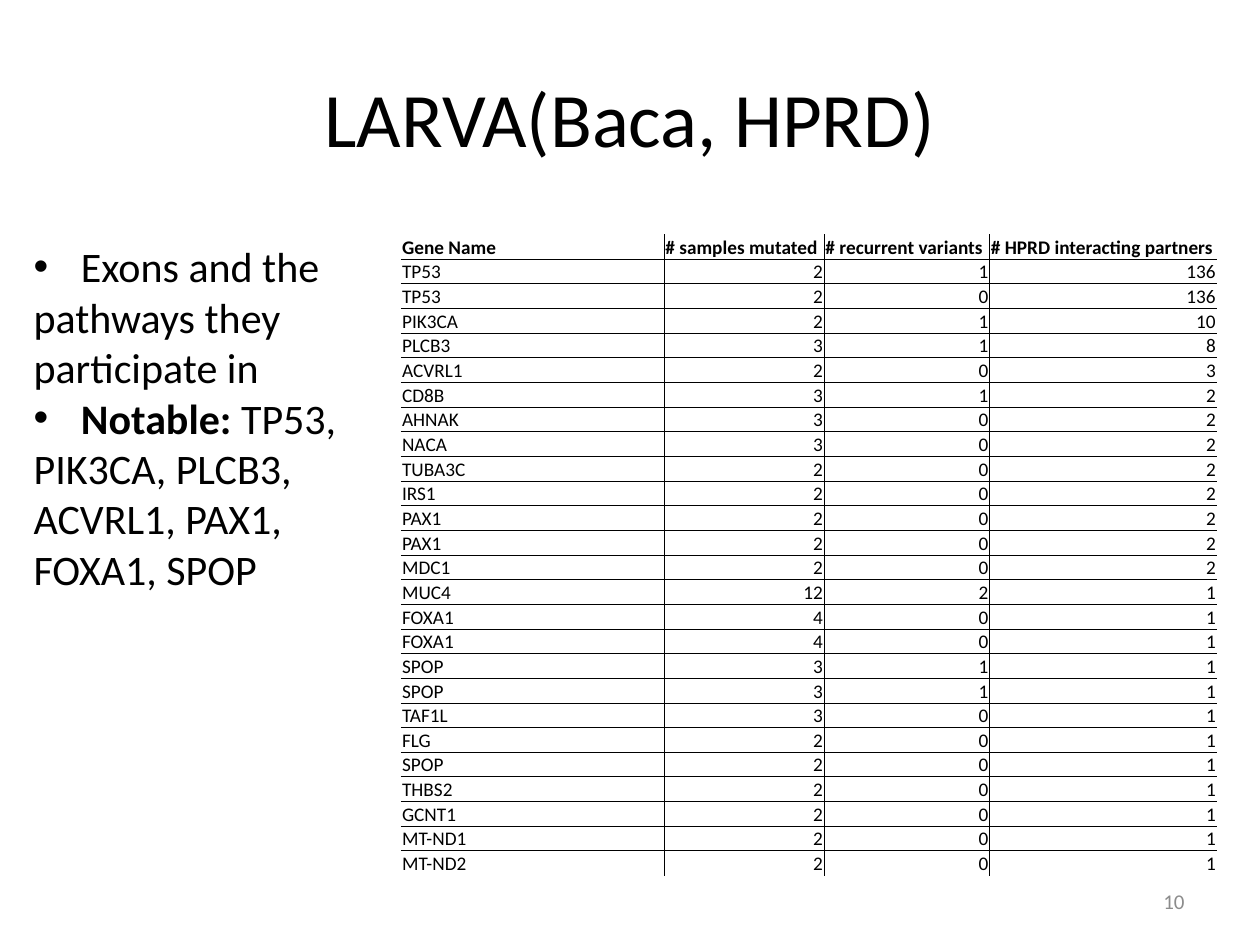
from dataclasses import dataclass
from typing import NamedTuple

from lxml.etree import SubElement
from pptx import Presentation
from pptx.dml.color import RGBColor
from pptx.enum.text import MSO_ANCHOR, MSO_AUTO_SIZE, PP_ALIGN
from pptx.oxml.ns import qn
from pptx.util import Pt


@dataclass(frozen=True)
class Theme:
    font: str = "Calibri"
    bullet_font: str = "Arial"
    ink: str = "000000"
    muted: str = "8C8C8C"
    title_size: float = 44
    body_size: float = 24
    table_size: float = 11
    number_size: float = 12
    border_width: float = 0.5


class Box(NamedTuple):
    left: float
    top: float
    width: float
    height: float


class Gene(NamedTuple):
    name: str
    samples: int
    variants: int
    partners: int


class ListLine(NamedTuple):
    text: str
    lead: str = ""
    bulleted: bool = False


THEME = Theme()
TITLE_BOX = Box(36, 21.6, 648, 90)
TABLE_BOX = Box(229, 134, 466.5, 366.6)
NUMBER_BOX = Box(516, 500.5, 168, 28.8)
LIST_BOX = Box(12, 134, 188, 211)
COLUMN_WIDTHS = (150.5, 91.5, 94.5, 130)
HANGING_INDENT = 27
CELL_INSET = 0.75

HEADINGS = (
    "Gene Name",
    "# samples mutated",
    "# recurrent variants",
    "# HPRD interacting partners",
)
GENES = (
    Gene("TP53", 2, 1, 136),
    Gene("TP53", 2, 0, 136),
    Gene("PIK3CA", 2, 1, 10),
    Gene("PLCB3", 3, 1, 8),
    Gene("ACVRL1", 2, 0, 3),
    Gene("CD8B", 3, 1, 2),
    Gene("AHNAK", 3, 0, 2),
    Gene("NACA", 3, 0, 2),
    Gene("TUBA3C", 2, 0, 2),
    Gene("IRS1", 2, 0, 2),
    Gene("PAX1", 2, 0, 2),
    Gene("PAX1", 2, 0, 2),
    Gene("MDC1", 2, 0, 2),
    Gene("MUC4", 12, 2, 1),
    Gene("FOXA1", 4, 0, 1),
    Gene("FOXA1", 4, 0, 1),
    Gene("SPOP", 3, 1, 1),
    Gene("SPOP", 3, 1, 1),
    Gene("TAF1L", 3, 0, 1),
    Gene("FLG", 2, 0, 1),
    Gene("SPOP", 2, 0, 1),
    Gene("THBS2", 2, 0, 1),
    Gene("GCNT1", 2, 0, 1),
    Gene("MT-ND1", 2, 0, 1),
    Gene("MT-ND2", 2, 0, 1),
)
LIST_LINES = (
    ListLine("Exons and the", bulleted=True),
    ListLine("pathways they"),
    ListLine("participate in"),
    ListLine(" TP53,", lead="Notable:", bulleted=True),
    ListLine("PIK3CA, PLCB3,"),
    ListLine("ACVRL1, PAX1,"),
    ListLine("FOXA1, SPOP"),
)


def in_points(box: Box) -> tuple:
    return tuple(Pt(length) for length in box)


def place(shape, box: Box) -> None:
    shape.left, shape.top, shape.width, shape.height = in_points(box)


def set_font(paragraph, size: float, color: str) -> None:
    paragraph.font.name = THEME.font
    paragraph.font.size = Pt(size)
    paragraph.font.color.rgb = RGBColor.from_string(color)


def add_title(slide, text: str) -> None:
    title = slide.shapes.title
    place(title, TITLE_BOX)
    title.text_frame.text = text
    set_font(title.text_frame.paragraphs[0], THEME.title_size, THEME.ink)


def set_borders(cell, edges: dict[str, bool]) -> None:
    properties = cell._tc.get_or_add_tcPr()
    for edge, visible in edges.items():
        line = SubElement(properties, qn(f"a:{edge}"), w=str(Pt(THEME.border_width)))
        if visible:
            fill = SubElement(line, qn("a:solidFill"))
            SubElement(fill, qn("a:srgbClr"), val=THEME.ink)
        else:
            SubElement(line, qn("a:noFill"))


def fill_cell(cell, text: str, heading: bool, numeric: bool) -> None:
    cell.fill.background()
    cell.vertical_anchor = MSO_ANCHOR.BOTTOM
    cell.margin_left = cell.margin_right = cell.margin_top = Pt(CELL_INSET)
    cell.margin_bottom = Pt(0)
    cell.text = text
    paragraph = cell.text_frame.paragraphs[0]
    paragraph.alignment = PP_ALIGN.RIGHT if numeric else PP_ALIGN.LEFT
    set_font(paragraph, THEME.table_size, THEME.ink)
    paragraph.font.bold = heading


def add_gene_table(slide) -> None:
    rows = (HEADINGS, *GENES)
    last_row, last_column = len(rows) - 1, len(HEADINGS) - 1
    table = slide.shapes.add_table(len(rows), len(HEADINGS), *in_points(TABLE_BOX)).table
    table.first_row = table.horz_banding = False
    for column, width in zip(table.columns, COLUMN_WIDTHS):
        column.width = Pt(width)
    for row_index, values in enumerate(rows):
        table.rows[row_index].height = Pt(TABLE_BOX.height / len(rows))
        for column_index, value in enumerate(values):
            cell = table.cell(row_index, column_index)
            set_borders(cell, {
                "lnL": column_index > 0,
                "lnR": column_index < last_column,
                "lnT": row_index > 0,
                "lnB": row_index < last_row,
            })
            fill_cell(cell, str(value), row_index == 0, isinstance(value, int))


def set_bullet(paragraph, bulleted: bool) -> None:
    properties = paragraph._p.get_or_add_pPr()
    indent = Pt(HANGING_INDENT) if bulleted else 0
    properties.set("marL", str(indent))
    properties.set("indent", str(-indent))
    if bulleted:
        SubElement(properties, qn("a:buFont"), typeface=THEME.bullet_font)
        SubElement(properties, qn("a:buChar"), char="•")
    else:
        SubElement(properties, qn("a:buNone"))


def add_list(slide, lines: tuple[ListLine, ...]) -> None:
    body = slide.placeholders[1]
    place(body, LIST_BOX)
    frame = body.text_frame
    frame.word_wrap = False
    frame.auto_size = MSO_AUTO_SIZE.SHAPE_TO_FIT_TEXT
    for index, line in enumerate(lines):
        paragraph = frame.add_paragraph() if index else frame.paragraphs[0]
        paragraph.space_before = Pt(0)
        set_bullet(paragraph, line.bulleted)
        set_font(paragraph, THEME.body_size, THEME.ink)
        if line.lead:
            lead = paragraph.add_run()
            lead.text = line.lead
            lead.font.bold = True
        paragraph.add_run().text = line.text


def add_slide_number(slide, number: str) -> None:
    frame = slide.shapes.add_textbox(*in_points(NUMBER_BOX)).text_frame
    frame.word_wrap = True
    frame.vertical_anchor = MSO_ANCHOR.MIDDLE
    frame.text = number
    paragraph = frame.paragraphs[0]
    paragraph.alignment = PP_ALIGN.RIGHT
    set_font(paragraph, THEME.number_size, THEME.muted)


def main() -> None:
    presentation = Presentation()
    presentation.slide_width, presentation.slide_height = Pt(720), Pt(540)
    slide = presentation.slides.add_slide(presentation.slide_layouts[1])
    add_title(slide, "LARVA(Baca, HPRD)")
    add_gene_table(slide)
    add_slide_number(slide, "10")
    add_list(slide, LIST_LINES)
    presentation.save("out.pptx")


if __name__ == "__main__":
    main()
